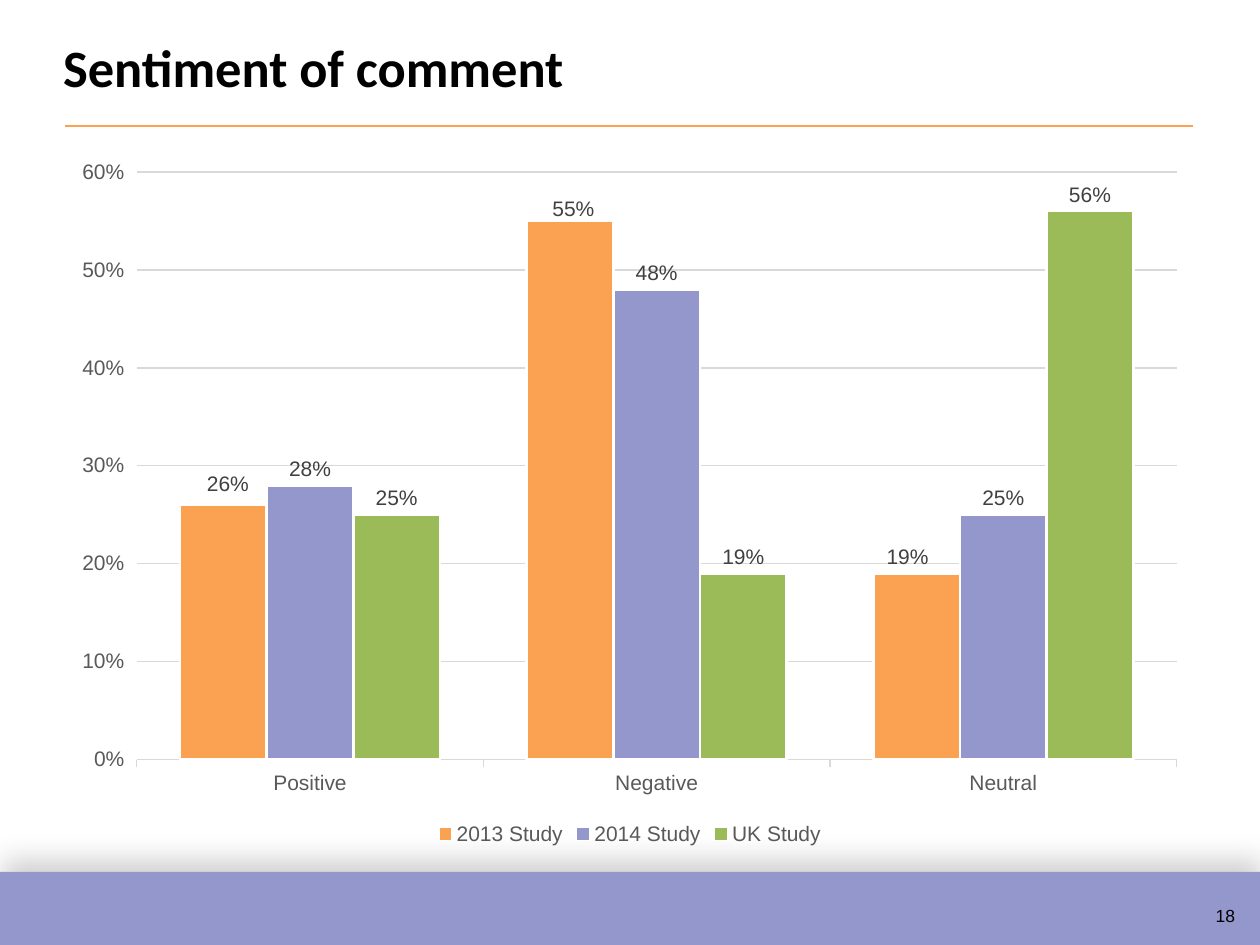
from dataclasses import dataclass

from lxml import etree
from pptx import Presentation, oxml
from pptx.chart.data import CategoryChartData
from pptx.dml.color import RGBColor
from pptx.enum import chart as ch, shapes, text
from pptx.oxml import ns
from pptx.util import Inches, Pt


@dataclass(frozen=True)
class Theme:
    orange: str = "FBA252"
    lilac: str = "9497CC"
    green: str = "9BBB59"
    black: str = "000000"
    white: str = "FFFFFF"
    axis_text: str = "595959"
    label_text: str = "404040"
    grid: str = "D9D9D9"
    heading: str = "Calibri"
    body: str = "Arial"
    title_size: int = 30
    chart_size: int = 12
    number_size: int = 10


T = Theme()
CATEGORIES = ["Positive", "Negative", "Neutral"]
STUDIES = [
    ("2013 Study", (0.26, 0.55, 0.19), T.orange),
    ("2014 Study", (0.28, 0.48, 0.25), T.lilac),
    ("UK Study", (0.25, 0.19, 0.56), T.green),
]
LABEL_SHIFTS = [(0.004, -0.007), (0.003, 0.006), (-0.008, 0)]


def rgb(color):
    return RGBColor.from_string(color)


def style_font(font, size, color, name=T.body, bold=False):
    font.size, font.name, font.bold = Pt(size), name, bold
    font.color.rgb = rgb(color)


def style_line(line, color, width):
    line.color.rgb = rgb(color)
    line.width = Pt(width)


def add_title(s, box, wording):
    sp = s.shapes.title
    sp.left, sp.top, sp.width, sp.height = box
    tf = sp.text_frame
    tf.text = wording
    tf.word_wrap = True
    tf.auto_size = text.MSO_AUTO_SIZE.NONE
    tf.vertical_anchor = text.MSO_ANCHOR.MIDDLE
    p = tf.paragraphs[0]
    p.alignment = text.PP_ALIGN.LEFT
    style_font(p.runs[0].font, T.title_size, T.black, T.heading, True)


def add_rule(s, left, right, y):
    line = s.shapes.add_connector(shapes.MSO_CONNECTOR.STRAIGHT, left, y, right, y)
    style_line(line.line, T.orange, 1)
    etree.SubElement(line._element.spPr, ns.qn("a:effectLst"))


def add_footer(s, box, number):
    left, top, width, height = box
    band = s.shapes.add_shape(shapes.MSO_SHAPE.RECTANGLE, *box)
    band.fill.solid()
    band.fill.fore_color.rgb = rgb(T.lilac)
    band.line.fill.background()
    band._element.spPr.append(oxml.parse_xml(
        f'<a:effectLst {ns.nsdecls("a")}>'
        f'<a:outerShdw blurRad="{Pt(16)}" dist="{Pt(8)}" dir="{277 * 60000}" rotWithShape="0">'
        f'<a:srgbClr val="{T.black}"><a:alpha val="19000"/></a:srgbClr>'
        '</a:outerShdw></a:effectLst>'))

    sp = s.shapes.add_textbox(left + width - Inches(0.45), top + Inches(0.13),
                              Inches(0.37), Inches(0.34))
    tf = sp.text_frame
    tf.text = number
    tf.word_wrap = False
    p = tf.paragraphs[0]
    p.line_spacing, p.space_before = 1.5, Pt(6)
    style_font(p.runs[0].font, T.number_size, T.black)


def layout_xml(**parts):
    values = "".join(f'<c:{k} val="{v}"/>' for k, v in parts.items())
    return f'<c:layout {ns.nsdecls("c")}><c:manualLayout>{values}</c:manualLayout></c:layout>'


def shift_labels(labels, shifts):
    for i, (x, y) in enumerate(shifts):
        labels._element.insert(i, oxml.parse_xml(
            f'<c:dLbl {ns.nsdecls("c")}><c:idx val="{i}"/>{layout_xml(x=x, y=y)}'
            '<c:dLblPos val="outEnd"/><c:showLegendKey val="0"/><c:showVal val="1"/>'
            '<c:showCatName val="0"/><c:showSerName val="0"/><c:showPercent val="0"/>'
            '<c:showBubbleSize val="0"/></c:dLbl>'))


def style_axes(chart):
    for axis in (chart.category_axis, chart.value_axis):
        style_font(axis.tick_labels.font, T.chart_size, T.axis_text)
        axis.major_tick_mark = ch.XL_TICK_MARK.OUTSIDE
        axis.minor_tick_mark = ch.XL_TICK_MARK.NONE
    style_line(chart.category_axis.format.line, T.grid, 0.75)
    values = chart.value_axis
    values.format.line.fill.background()
    values.minimum_scale, values.maximum_scale, values.major_unit = 0, 0.6, 0.1
    values.tick_labels.number_format = "0%"
    values.tick_labels.number_format_is_linked = False
    style_line(values.major_gridlines.format.line, T.grid, 0.75)


def style_series(series, color):
    series.format.fill.solid()
    series.format.fill.fore_color.rgb = rgb(color)
    style_line(series.format.line, T.white, 1.5)
    labels = series.data_labels
    labels.show_value = True
    labels.number_format, labels.number_format_is_linked = "0%", False
    labels.position = ch.XL_LABEL_POSITION.OUTSIDE_END
    style_font(labels.font, T.chart_size, T.label_text)


def add_sentiment_chart(s, box):
    data = CategoryChartData(number_format="0%")
    data.categories = CATEGORIES
    for name, values, _ in STUDIES:
        data.add_series(name, values)
    chart = s.shapes.add_chart(ch.XL_CHART_TYPE.COLUMN_CLUSTERED, *box, data).chart
    style_font(chart.font, T.number_size, T.black)
    chart.has_title = False
    chart.has_legend = True
    chart.legend.position = ch.XL_LEGEND_POSITION.BOTTOM
    chart.legend.include_in_layout = False
    style_font(chart.legend.font, T.chart_size, T.axis_text)
    style_axes(chart)

    plot = chart.plots[0]
    plot.gap_width, plot.overlap, plot.vary_by_categories = 100, 0, False
    for series, (_, _, color) in zip(plot.series, STUDIES):
        style_series(series, color)
    shift_labels(plot.series[0].data_labels, LABEL_SHIFTS)

    area = chart._chartSpace.chart.plotArea
    for old in area.findall(ns.qn("c:layout")):
        area.remove(old)
    area.insert(0, oxml.parse_xml(layout_xml(
        layoutTarget="inner", xMode="edge", yMode="edge", x=0.067, y=0.035, w=0.913, h=0.836)))


def main():
    prs = Presentation()
    prs.slide_width, prs.slide_height = Inches(10), Inches(7.5)
    s = prs.slides.add_slide(prs.slide_layouts[0])
    subtitle = s.placeholders[1]._element
    subtitle.getparent().remove(subtitle)

    add_footer(s, (0, Inches(6.92), prs.slide_width, Inches(0.58)), "18")
    add_rule(s, Inches(0.52), Inches(9.47), Inches(1))
    add_sentiment_chart(s, (Inches(0.48), Inches(1.17), Inches(9.04), Inches(5.58)))
    add_title(s, (Inches(0.4), Inches(0.22), Inches(9.15), Inches(0.61)), "Sentiment of comment")
    prs.save("out.pptx")


if __name__ == "__main__":
    main()
